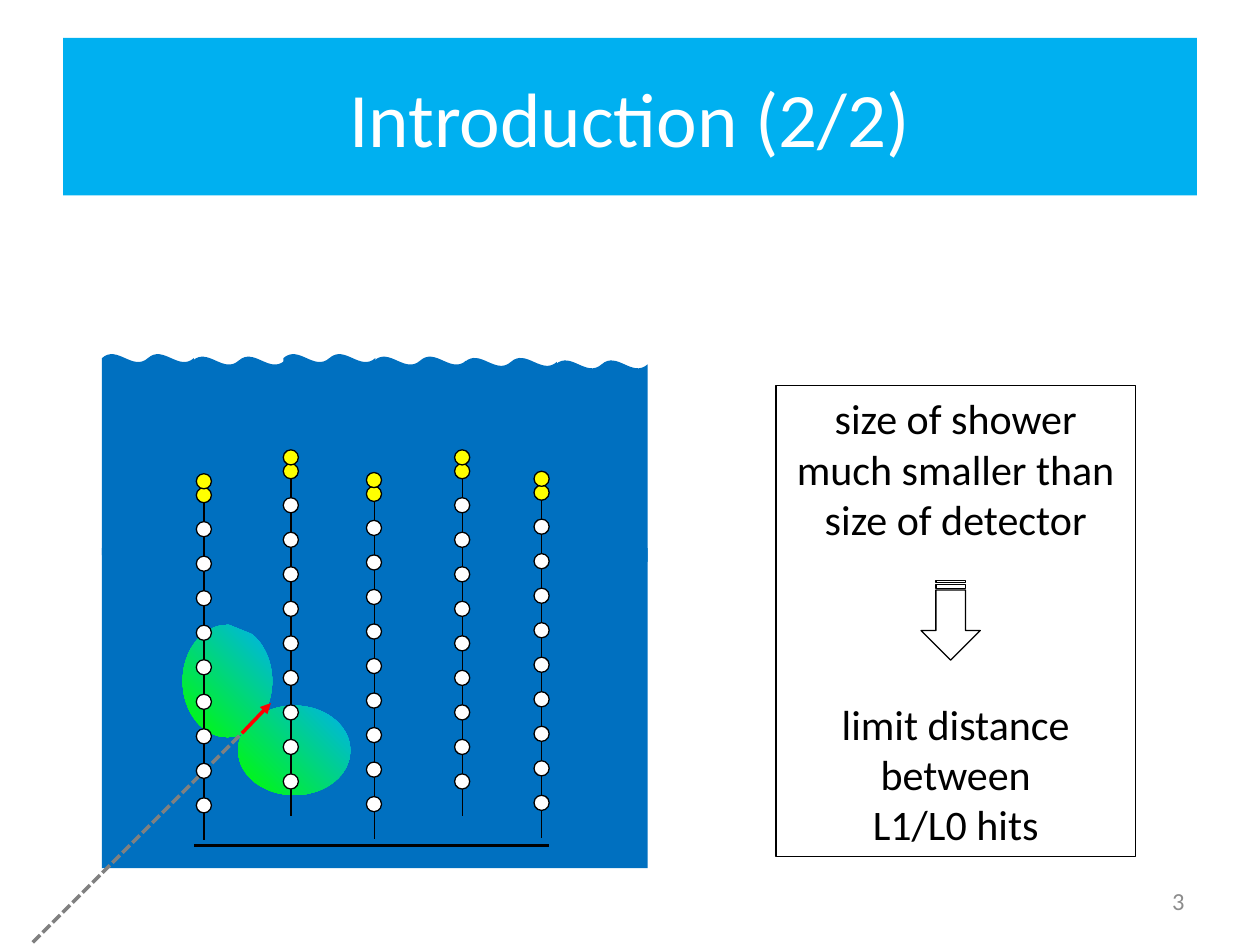
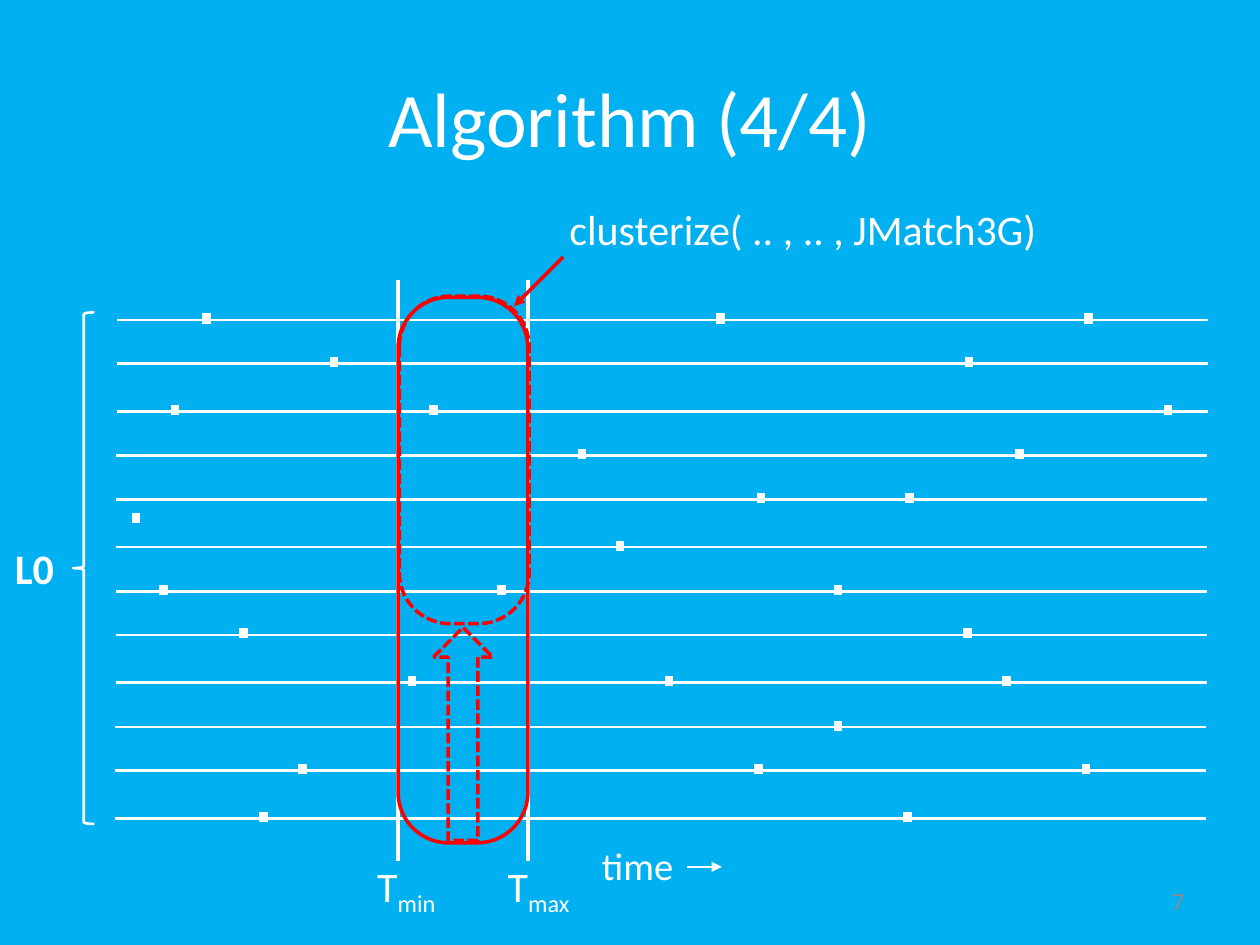
from dataclasses import dataclass

from lxml.etree import SubElement
from pptx import Presentation
from pptx.dml.color import RGBColor
from pptx.enum.dml import MSO_LINE
from pptx.enum.shapes import MSO_CONNECTOR, MSO_SHAPE
from pptx.enum.text import MSO_ANCHOR, MSO_AUTO_SIZE, PP_ALIGN
from pptx.oxml.ns import qn
from pptx.util import Inches, Pt

COLS, ROWS = 100, 75  # slide grid
CELL = Inches(0.1)


@dataclass(frozen=True)
class Theme:
    font: str = "Calibri"
    sky: str = "00B0F0"
    water: str = "0070C0"
    white: str = "FFFFFF"
    black: str = "000000"
    red: str = "FF0000"
    yellow: str = "FFFF00"
    green: str = "00FF00"
    track: str = "808080"
    number: str = "8C8C8C"
    title_size: int = 44
    body_size: int = 24
    axis_size: int = 22
    number_size: int = 14
    hairline: float = 0.75
    channel: float = 1.5
    bold_line: float = 2
    hit: float = 5


THEME = Theme()


@dataclass(frozen=True)
class Box:
    """A region of the slide, in grid columns and rows."""
    x: float
    y: float
    w: float
    h: float

    def inner(self, x, y, w, h):
        return Box(self.x + x, self.y + y, w, h)

    def emu(self):
        return [round(v * CELL) for v in (self.x, self.y, self.w, self.h)]


TITLE = Box(5, 3, 90, 12.5)
NUMBER = Box(71.7, 69.5, 23.3, 4)
DETECTOR = Box(8.1, 28.1, 43.3, 40.8)
NOTE = Box(61.6, 30.6, 28.5, 37.4)
TIMELINE = Box(9.1, 22.2, 86.8, 46.1)


def rgb(color):
    return RGBColor.from_string(color)


def style_line(line, color, width, dashed=False):
    line.color.rgb = rgb(color)
    line.width = Pt(width)
    if dashed:
        line.dash_style = MSO_LINE.SQUARE_DOT


def add_preset(shapes, kind, box, fill=None, line=None, width=THEME.hairline,
               dashed=False, adjust=(), rotation=0):
    sp = shapes.add_shape(kind, *box.emu())
    sp.shadow.inherit = False
    sp.rotation = rotation
    for i, value in enumerate(adjust):
        sp.adjustments[i] = value
    if fill:
        sp.fill.solid()
        sp.fill.fore_color.rgb = rgb(fill)
    else:
        sp.fill.background()
    if line:
        style_line(sp.line, line, width, dashed)
    else:
        sp.line.fill.background()
    return sp


def add_line(shapes, box, start, end, color, width, dashed=False, arrow=False):
    """Draw a line between two points given relative to the box."""
    points = [round(v * CELL) for x, y in (start, end)
              for v in (box.x + x, box.y + y)]
    cxn = shapes.add_connector(MSO_CONNECTOR.STRAIGHT, *points)
    style_line(cxn.line, color, width, dashed)
    props = cxn._element.spPr
    if arrow:
        SubElement(props.get_or_add_ln(), qn("a:tailEnd"), type="triangle")
    SubElement(props, qn("a:effectLst"))


def add_run(p, text, size, color, bold=False, subscript=False):
    r = p.add_run()
    r.text = text
    r.font.name = THEME.font
    r.font.size = Pt(size)
    r.font.color.rgb = rgb(color)
    r.font.bold = bold
    if subscript:
        r.font._element.set("baseline", "-25000")


def write(tf, texts, size, color, align=PP_ALIGN.CENTER, bold=False):
    """Fill a text frame, one paragraph per text."""
    for i, text in enumerate(texts):
        p = tf.add_paragraph() if i else tf.paragraphs[0]
        p.alignment = align
        for j, line in enumerate(text.split("\n")):
            if j:
                p.add_line_break()
            add_run(p, line, size, color, bold)


def add_label(shapes, box, text, size=THEME.body_size, color=THEME.white,
              align=PP_ALIGN.CENTER, bold=False):
    tf = shapes.add_textbox(*box.emu()).text_frame
    tf.word_wrap = False
    tf.auto_size = MSO_AUTO_SIZE.SHAPE_TO_FIT_TEXT
    write(tf, [text], size, color, align, bold)
    return tf


def add_slide(prs, title, number, background, band=None):
    s = prs.slides.add_slide(prs.slide_layouts[5])
    s.background.fill.solid()
    s.background.fill.fore_color.rgb = rgb(background)
    sp = s.shapes.title
    sp.left, sp.top, sp.width, sp.height = TITLE.emu()
    if band:
        sp.fill.solid()
        sp.fill.fore_color.rgb = rgb(band)
    sp.text_frame.vertical_anchor = MSO_ANCHOR.MIDDLE
    write(sp.text_frame, [title], THEME.title_size, THEME.white)
    tf = s.shapes.add_textbox(*NUMBER.emu()).text_frame
    tf.word_wrap = True
    tf.vertical_anchor = MSO_ANCHOR.MIDDLE
    write(tf, [str(number)], THEME.number_size, THEME.number, PP_ALIGN.RIGHT)
    return s


def draw_sea(shapes, box):
    waves = shapes.add_group_shape().shapes
    for i, dip in enumerate((0, 0.2, 0, 0.2, 0.3, 0.5)):
        add_preset(waves, MSO_SHAPE.DOUBLE_WAVE,
                   box.inner(7.2 * i, dip, 7.3, 16.3), THEME.water,
                   adjust=(0.02, 0))
    add_preset(shapes, MSO_SHAPE.RECTANGLE, box.inner(0, 15.4, box.w, 25.4),
               THEME.water)
    add_line(shapes, box, (7.3, 39), (35.5, 39), THEME.black, THEME.bold_line)


def draw_lobe(shapes, box, angles, rotation, gradient_angle):
    """Draw a shower lobe; chord angles are in degrees."""
    sp = add_preset(shapes, MSO_SHAPE.CHORD, box, rotation=rotation,
                    adjust=[0.6 * a for a in angles])
    sp.fill.gradient()
    sp.fill.gradient_angle = gradient_angle
    for stop, position, color in zip(sp.fill.gradient_stops, (0, 1),
                                     (THEME.sky, THEME.green)):
        stop.position = position
        stop.color.rgb = rgb(color)


def draw_string(shapes, box):
    """Draw a detector string: nine sensors below two buoys."""
    group = shapes.add_group_shape().shapes
    add_line(group, box, (0, 0), (0, box.h), THEME.black, THEME.hairline)
    beads = [(3.1 + 2.74 * i, THEME.white) for i in range(9)]
    for y, fill in beads + [(0.4, THEME.yellow), (-0.7, THEME.yellow)]:
        add_preset(group, MSO_SHAPE.OVAL, box.inner(-0.62, y, 1.2, 1.2), fill,
                   THEME.black)


def draw_detector(shapes, box):
    draw_sea(shapes, box)
    draw_lobe(shapes, box.inner(5.5, 22.4, 8.9, 7.1), (207.88, 181.69), 90, 315)
    draw_lobe(shapes, box.inner(11.7, 27, 7.1, 8.9), (192.41, 170.81), 270, 135)
    vertex = (11.1, 30.1)
    add_line(shapes, box, (-5.5, 46.7), vertex, THEME.track, THEME.bold_line,
             dashed=True)
    for x, y in ((8.1, 10.2), (15, 8.3), (21.6, 10.1), (28.6, 8.3), (34.9, 10)):
        draw_string(shapes, box.inner(x, y, 0, 28.4))
    add_line(shapes, box, vertex, (13.4, 27.7), THEME.red, THEME.bold_line,
             arrow=True)


def draw_note(shapes, box):
    sp = add_preset(shapes, MSO_SHAPE.RECTANGLE, box, line=THEME.black)
    tf = sp.text_frame
    tf.word_wrap = False
    tf.vertical_anchor = MSO_ANCHOR.MIDDLE
    write(tf, ["size of shower", "much smaller than", "size of detector",
               "limit distance\nbetween", "L1/L0 hits"],
          THEME.body_size, THEME.black)
    tf.paragraphs[3].space_before = Pt(88)
    add_preset(shapes, MSO_SHAPE.STRIPED_RIGHT_ARROW,
               box.inner(10.7, 16.3, 6.3, 4.7), line=THEME.black, rotation=90)


def draw_hit(shapes, box, x, y):
    add_line(shapes, box, (x, y), (x, y + 0.8), THEME.white, THEME.hit)


def draw_channels(shapes, box):
    """Draw the hits on channels that stand in four blocks of three."""
    hits = ((7.3, 48.1, 77.3), (17.4, 67.8), (4.8, 25.3, 83.6),
            (37.1, 71.8), (51.3, 63.1), (40.1,),
            (3.9, 30.7, 57.4), (10.2, 67.7), (23.6, 44, 70.8),
            (57.4,), (14.9, 51.1, 77.1), (11.8, 62.9))
    for i, row in enumerate(hits):
        block, line = divmod(i, 3)
        x = (0.2, 0.1, 0.1, 0)[block]
        y = 3.2 + 10.77 * block + (0, 3.45, 7.25)[line]
        add_line(shapes, box, (x, y), (x + 86.6, y), THEME.white, THEME.channel)
        for hit in row:
            draw_hit(shapes, box, hit, y - 0.52)
    draw_hit(shapes, box, 1.7, 18.5)
    add_preset(shapes, MSO_SHAPE.LEFT_BRACE, box.inner(-3.3, 2.6, 1.7, 40.6),
               line=THEME.white, width=THEME.channel)
    add_label(shapes, box.inner(-8.9, 20.4, 5.1, 5), "L0", align=PP_ALIGN.LEFT,
              bold=True)


def draw_time_axis(shapes, box):
    limits = shapes.add_group_shape().shapes
    for x, name, left, width in ((22.5, "min", 19.7, 6.9),
                                 (32.8, "max", 30, 7.3)):
        add_line(limits, box, (x, 0), (x, box.h), THEME.white, THEME.bold_line)
        tf = add_label(shapes, box.inner(left, 45.6, width, 5), "T")
        add_run(tf.paragraphs[0], name, THEME.body_size, THEME.white,
                subscript=True)
    add_label(shapes, box.inner(37.6, 44.1, 7.8, 4.7), "time", THEME.axis_size)
    add_line(shapes, box, (45.4, 46.6), (48.2, 46.6), THEME.white,
             THEME.hairline, arrow=True)


def draw_cluster(shapes, box):
    outline = dict(line=THEME.red, width=THEME.bold_line)
    add_preset(shapes, MSO_SHAPE.ROUNDED_RECTANGLE,
               box.inner(22.5, 1.4, 10.3, 43.3), adjust=[0.39], **outline)
    add_line(shapes, box, (35.6, -1.8), (31.7, 2.1), THEME.red,
             THEME.bold_line, arrow=True)
    add_label(shapes, box.inner(35.1, -6.5, 39.4, 5),
              "clusterize( .. , .. , JMatch3G)", align=PP_ALIGN.LEFT)
    add_preset(shapes, MSO_SHAPE.ROUNDED_RECTANGLE,
               box.inner(22.6, 1.3, 10.3, 26), adjust=[0.39], dashed=True,
               **outline)
    add_preset(shapes, MSO_SHAPE.UP_ARROW, box.inner(25.3, 27.6, 4.7, 16.9),
               dashed=True, **outline)


def main():
    prs = Presentation()
    prs.slide_width, prs.slide_height = COLS * CELL, ROWS * CELL

    s = add_slide(prs, "Introduction (2/2)", 3, THEME.white, band=THEME.sky)
    draw_detector(s.shapes, DETECTOR)
    draw_note(s.shapes, NOTE)

    s = add_slide(prs, "Algorithm (4/4)", 7, THEME.sky)
    for draw in (draw_time_axis, draw_channels, draw_cluster):
        draw(s.shapes, TIMELINE)

    prs.save("out.pptx")


if __name__ == "__main__":
    main()
